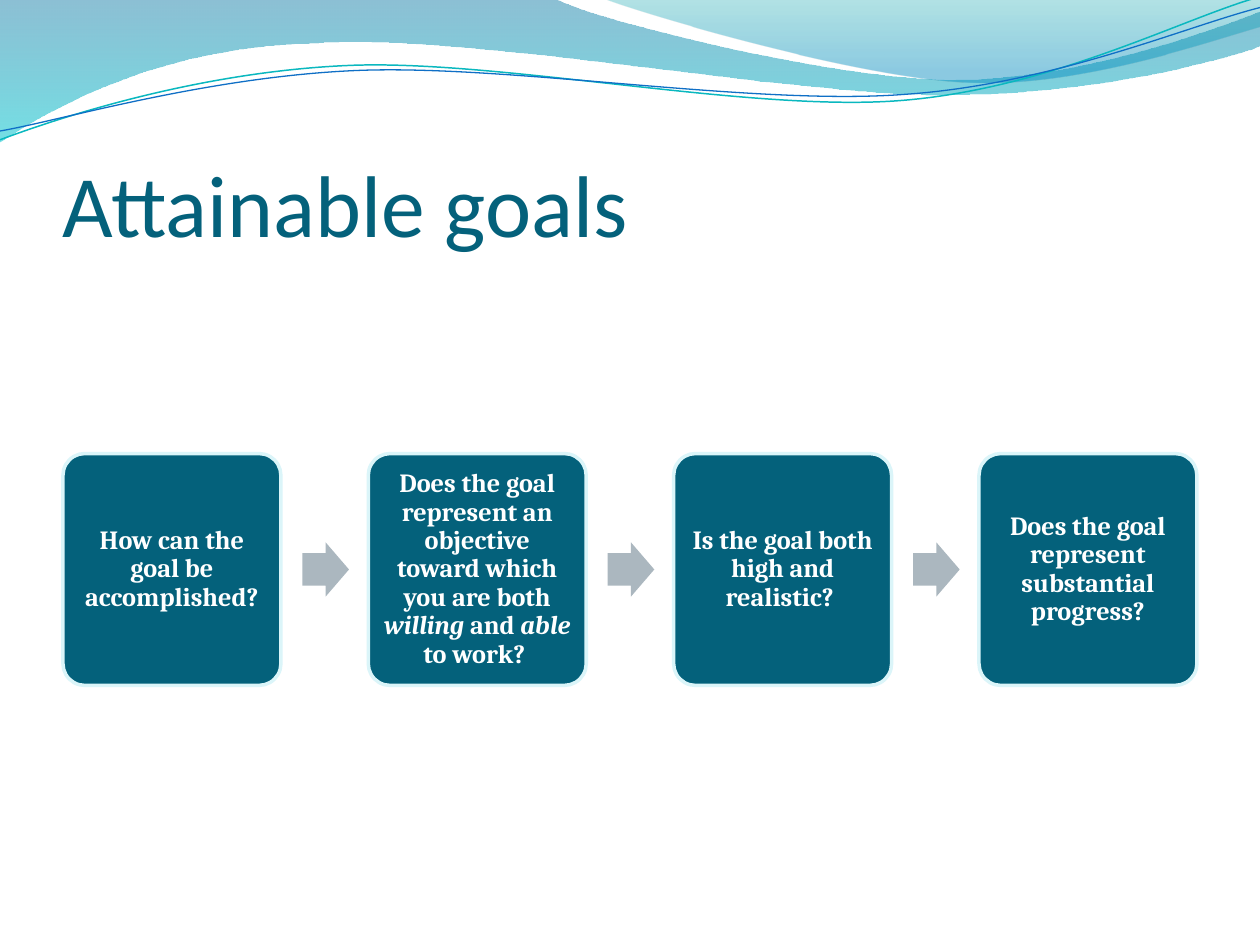
from lxml.etree import SubElement
from pptx import Presentation
from pptx.dml.color import RGBColor
from pptx.enum.shapes import MSO_SHAPE
from pptx.enum.text import MSO_ANCHOR, PP_ALIGN
from pptx.oxml.ns import qn
from pptx.util import Inches, Pt

W, H = 10, 7.5
TITLE = "Attainable goals"
STEPS = [
    [("How can the goal be accomplished?", False)],
    [("Does the goal represent an objective toward which you are both ", False),
     ("willing", True), (" and ", False), ("able", True), (" to work? ", False)],
    [("Is the goal both high and realistic? ", False)],
    [("Does the goal represent substantial progress?", False)],
]
TEAL, PALE, GREY, WHITE = "04617B", "DBF5F9", "ABB7BF", "FFFFFF"
TITLE_FONT = {"size": Pt(50), "name": "Calibri"}
STEP_FONT = {"size": Pt(15), "name": "Cambria", "bold": True}

BANDS = [
    ([(0, 0), (4.4, -0.01), (4.76, 0.17, 6.64, 0.63, 7.58, 0.63),
      (8.53, 0.63, 9.58, 0.26, 10, 0.09), (10.01, 0.36),
      (9.83, 0.44, 8.7, 0.76, 7.46, 0.75), (6.22, 0.75, 3.82, 0.28, 2.57, 0.34),
      (1.29, 0.36, 0.46, 0.83, -0.01, 1.13), (0, 0)],
     [(0, "0074A1", 45), (1, "00C6CF", 55)]),
    ([(4.79, -0.01), (5.09, 0.11, 6.82, 0.62, 7.69, 0.65),
      (8.56, 0.69, 9.61, 0.32, 10, 0.21), (10, 0), (4.79, -0.01)],
     [(0, "00A1A9", 30), (0.8, "008BBF", 45)]),
]
WAVES = [
    ([(0, 1.11), (0.48, 0.93, 1.58, 0.57, 2.77, 0.52),
      (3.95, 0.47, 5.93, 0.89, 7.13, 0.8), (8.33, 0.71, 9.38, 0.15, 9.98, -0.02)],
     "0AB8BF", 0.85),
    ([(0, 1.04), (0.47, 0.96, 1.64, 0.61, 2.83, 0.56),
      (4.03, 0.51, 5.97, 0.84, 7.17, 0.75), (8.36, 0.67, 9.41, 0.21, 10, 0.06)],
     "0F6FC6", 0.75),
]

MARGIN = 0.05 * W
BOX_W, BOX_H, BOX_Y = 1.73, 1.84, 3.6
PITCH = (W - 2 * MARGIN - BOX_W) / (len(STEPS) - 1)
ARROW_W, ARROW_H = 0.37, 0.43
ARROW_DX = BOX_W + 0.17


def rgb(value):
    return RGBColor.from_string(value)


def draw_path(s, segments, close):
    points = [(Inches(seg[k]), Inches(seg[k + 1]))
              for seg in segments for k in range(0, len(seg), 2)]
    fb = s.shapes.build_freeform(*points[0], scale=1.0)
    fb.add_line_segments(points[1:], close=close)
    sp = fb.convert_to_shape()
    sp.shadow.inherit = False
    lines = iter(list(sp._element.iter(qn("a:lnTo"))))
    for seg in segments[1:]:
        first = next(lines)
        if len(seg) == 6:
            first.tag = qn("a:cubicBezTo")
            for _ in range(2):
                line = next(lines)
                first.append(line[0])
                line.getparent().remove(line)
    return sp


def add_band(s, segments, stops):
    sp = draw_path(s, segments, True)
    sp.line.fill.background()
    sp.fill.gradient()
    sp.fill.gradient_angle = 270
    for stop, (position, color, _) in zip(sp.fill.gradient_stops, stops):
        stop.position = position
        stop.color.rgb = rgb(color)
    for clr, (_, _, opacity) in zip(sp._element.spPr.iter(qn("a:srgbClr")), stops):
        SubElement(clr, qn("a:alpha"), val=str(opacity * 1000))


def add_wave(s, segments, color, width):
    sp = draw_path(s, segments, False)
    sp.fill.background()
    sp.line.color.rgb = rgb(color)
    sp.line.width = Pt(width)


def add_block(s, kind, box, adjustments, color):
    sp = s.shapes.add_shape(kind, *map(Inches, box))
    sp.shadow.inherit = False
    for i, value in enumerate(adjustments):
        sp.adjustments[i] = value
    sp.fill.solid()
    sp.fill.fore_color.rgb = rgb(color)
    sp.line.fill.background()
    return sp


def write(sp, runs, font, color, anchor, align, insets, spacing):
    tf = sp.text_frame
    tf.word_wrap = True
    tf.vertical_anchor = anchor
    for side, inset in zip(("left", "top", "right", "bottom"), insets):
        setattr(tf, f"margin_{side}", Inches(inset))
    p = tf.paragraphs[0]
    p.alignment = align
    p.line_spacing = spacing
    for text, italic in runs:
        r = p.add_run()
        r.text = text
        for key, value in {**font, "italic": italic}.items():
            setattr(r.font, key, value)
        r.font.color.rgb = rgb(color)


def main():
    prs = Presentation()
    prs.slide_width, prs.slide_height = Inches(W), Inches(H)
    s = prs.slides.add_slide(prs.slide_layouts[6])

    for band in BANDS:
        add_band(s, *band)
    for wave in WAVES:
        add_wave(s, *wave)

    title = s.shapes.add_textbox(*map(Inches, (MARGIN, 0.77, W - 2 * MARGIN, 1.25)))
    write(title, [(TITLE, False)], TITLE_FONT, TEAL, MSO_ANCHOR.BOTTOM,
          PP_ALIGN.LEFT, (0, 0.05, 0, 0), 1.0)

    for i, runs in enumerate(STEPS):
        x = MARGIN + i * PITCH
        sp = add_block(s, MSO_SHAPE.ROUNDED_RECTANGLE, (x, BOX_Y, BOX_W, BOX_H), [0.1], TEAL)
        sp.line.color.rgb = rgb(PALE)
        sp.line.width = Pt(2)
        write(sp, runs, STEP_FONT, WHITE, MSO_ANCHOR.MIDDLE, PP_ALIGN.CENTER, [0.06] * 4, 0.9)
        if i < len(STEPS) - 1:
            arrow_y = BOX_Y + (BOX_H - ARROW_H) / 2
            add_block(s, MSO_SHAPE.RIGHT_ARROW, (x + ARROW_DX, arrow_y, ARROW_W, ARROW_H),
                      [0.6, 0.5], GREY)

    prs.save("out.pptx")


if __name__ == "__main__":
    main()
